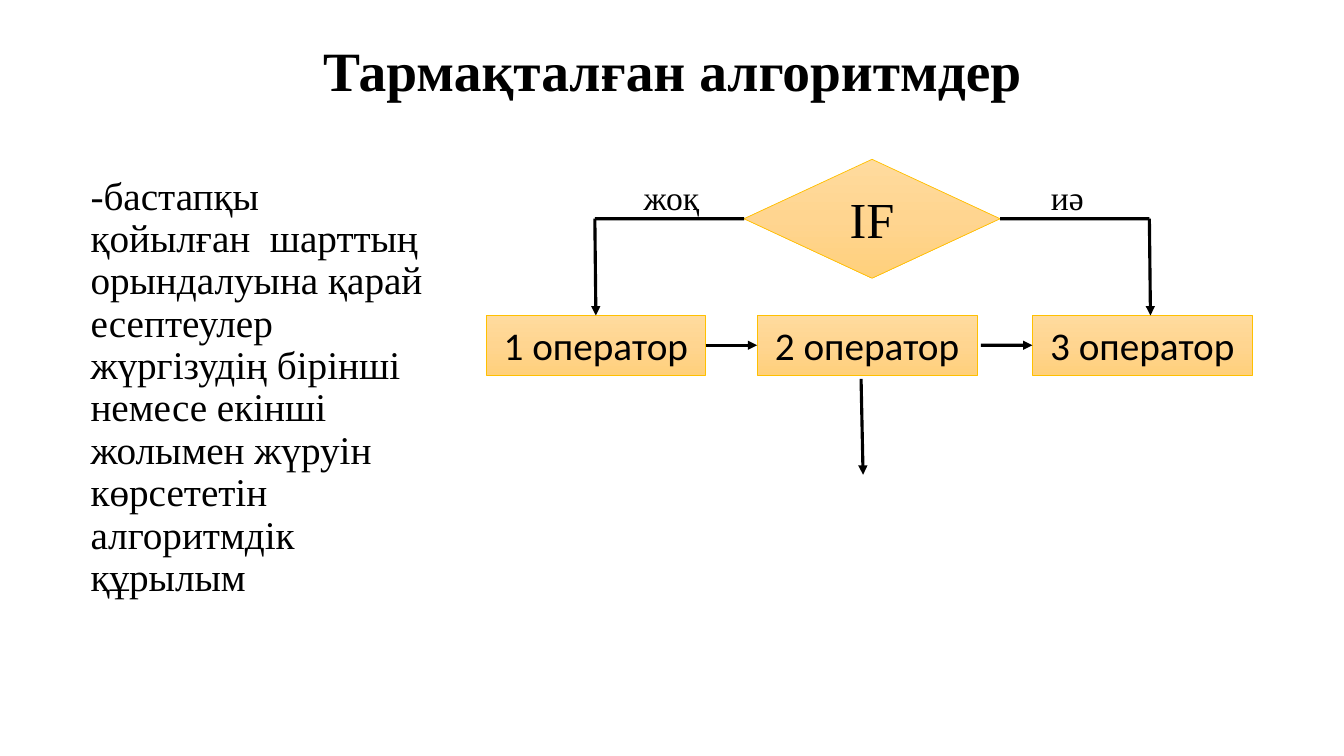
from copy import deepcopy
from dataclasses import dataclass

from lxml.etree import SubElement
from pptx import Presentation
from pptx.dml.color import RGBColor as RGB
from pptx.enum.shapes import MSO_CONNECTOR as Link, MSO_SHAPE as Shape
from pptx.enum.text import MSO_ANCHOR as Anchor, MSO_AUTO_SIZE as Fit, PP_ALIGN as Align
from pptx.oxml.ns import qn
from pptx.util import Inches, Pt

WIDTH, HEIGHT = Inches(13.33), Inches(7.5)
TOP, LEFT, BOTTOM, RIGHT = range(4)


@dataclass(frozen=True)
class Theme:
    """Colours, fonts and sizes of the slide."""
    ink: RGB = RGB(0, 0, 0)
    edge: RGB = RGB.from_string("FFC000")
    glow: tuple = ((0, "FFDB9E"), (0.5, "FFD590"), (1, "FFD07C"))
    serif: str = "Times New Roman"
    sans: str = "Calibri"
    title: float = 39.6
    condition: int = 36
    body: int = 28
    label: int = 24
    edge_width: float = 0.5
    flow_width: float = 2.25


THEME = Theme()


def col(share):
    """Turn a percentage of the slide's width into a length."""
    return round(WIDTH * share / 100)


def row(share):
    """Turn a percentage of the slide's height into a length."""
    return round(HEIGHT * share / 100)


def area(left, top, width, height):
    """Turn four percentages into a position and a size."""
    return col(left), row(top), col(width), row(height)


def apply(target, values):
    """Set every attribute named in a dict."""
    for name, value in values.items():
        setattr(target, name, value)


def write(holder, text, size, face=THEME.serif, bold=False, frame=None, paragraph=None):
    """Write one formatted paragraph into a shape."""
    apply(holder.text_frame, {"word_wrap": True, **(frame or {})})
    line = holder.text_frame.paragraphs[0]
    apply(line, {"alignment": Align.CENTER, **(paragraph or {})})
    run = line.add_run()
    run.text = text
    apply(run.font, {"name": face, "size": Pt(size), "bold": bold})
    run.font.color.rgb = THEME.ink


def add_title(slide, text, place):
    """Place and format the title placeholder."""
    heading = slide.shapes.title
    apply(heading, dict(zip(("left", "top", "width", "height"), place)))
    write(heading, text, THEME.title, bold=True,
          frame={"vertical_anchor": Anchor.MIDDLE, "auto_size": Fit.NONE},
          paragraph={"line_spacing": 0.9})


def add_text(slide, text, place, size, **formats):
    """Add a text box."""
    write(slide.shapes.add_textbox(*place), text, size, **formats)


def add_step(slide, kind, text, place, size, face):
    """Add a gradient flowchart block with centred text."""
    step = slide.shapes.add_shape(kind, *place)
    step.shadow.inherit = False
    step.fill.gradient()
    step.fill.gradient_angle = 270
    stops = step.element.find(".//" + qn("a:gsLst"))
    stops.insert(1, deepcopy(stops[0]))
    for stop, (position, colour) in zip(step.fill.gradient_stops, THEME.glow):
        stop.position = position
        stop.color.rgb = RGB.from_string(colour)
    step.line.color.rgb = THEME.edge
    step.line.width = Pt(THEME.edge_width)
    write(step, text, size, face, frame={"vertical_anchor": Anchor.MIDDLE})
    return step


def add_flow(slide, start, end, arrow=True):
    """Draw a flow line between grid points or (block, side) pairs."""
    flow = slide.shapes.add_connector(Link.STRAIGHT, 0, 0, 0, 0)
    for side, (first, second), join in (("begin", start, flow.begin_connect),
                                        ("end", end, flow.end_connect)):
        if hasattr(first, "shape_id"):
            join(first, second)
        else:
            apply(flow, {f"{side}_x": col(first), f"{side}_y": row(second)})
    flow.line.color.rgb = THEME.ink
    flow.line.width = Pt(THEME.flow_width)
    outline = flow.element.spPr.find(qn("a:ln"))
    if arrow:
        SubElement(outline, qn("a:tailEnd"), type="triangle")
    SubElement(flow.element.spPr, qn("a:effectLst"))


def main():
    """Build the branching algorithm slide."""
    deck = Presentation()
    apply(deck, {"slide_width": WIDTH, "slide_height": HEIGHT})
    slide = deck.slides.add_slide(deck.slide_layouts[5])
    add_title(slide, "Тармақталған алгоритмдер", area(6.9, 5.33, 86.27, 8.8))
    add_text(slide, "-бастапқы қойылған  шарттың орындалуына қарай есептеулер "
             "жүргізудің бірінші немесе екінші жолымен жүруін көрсететін "
             "алгоритмдік құрылым", area(6, 22.67, 26.26, 63.47), THEME.body,
             paragraph={"alignment": Align.LEFT, "line_spacing": 0.9,
                        "space_before": Pt(10)})

    condition = add_step(slide, Shape.FLOWCHART_DECISION, "IF",
                         area(55.36, 21.07, 19.05, 15.73), THEME.condition, THEME.serif)
    first, second, third = (
        add_step(slide, Shape.RECTANGLE, f"{number} оператор",
                 area(left, 41.73, 16.35, 7.87), THEME.body, THEME.sans)
        for number, left in enumerate((36.16, 56.34, 76.82), 1))

    no_corner, yes_corner = (44.26, 28.93), (85.52, 28.93)
    add_flow(slide, (condition, LEFT), no_corner, arrow=False)
    add_flow(slide, no_corner, (first, TOP))
    add_flow(slide, yes_corner, (condition, RIGHT), arrow=False)
    add_flow(slide, yes_corner, (85.6, 41.73))
    add_flow(slide, (first, RIGHT), (second, LEFT))
    add_flow(slide, (72.99, 45.67), (third, LEFT))
    add_flow(slide, (64.07, 50.13), (64.22, 62.8))

    for answer, left, width in (("жоқ", 45.46, 9), ("иә", 75.99, 6.83)):
        add_text(slide, answer, area(left, 22.7, width, 6.67), THEME.label,
                 frame={"auto_size": Fit.SHAPE_TO_FIT_TEXT})
    deck.save("out.pptx")


if __name__ == "__main__":
    main()
